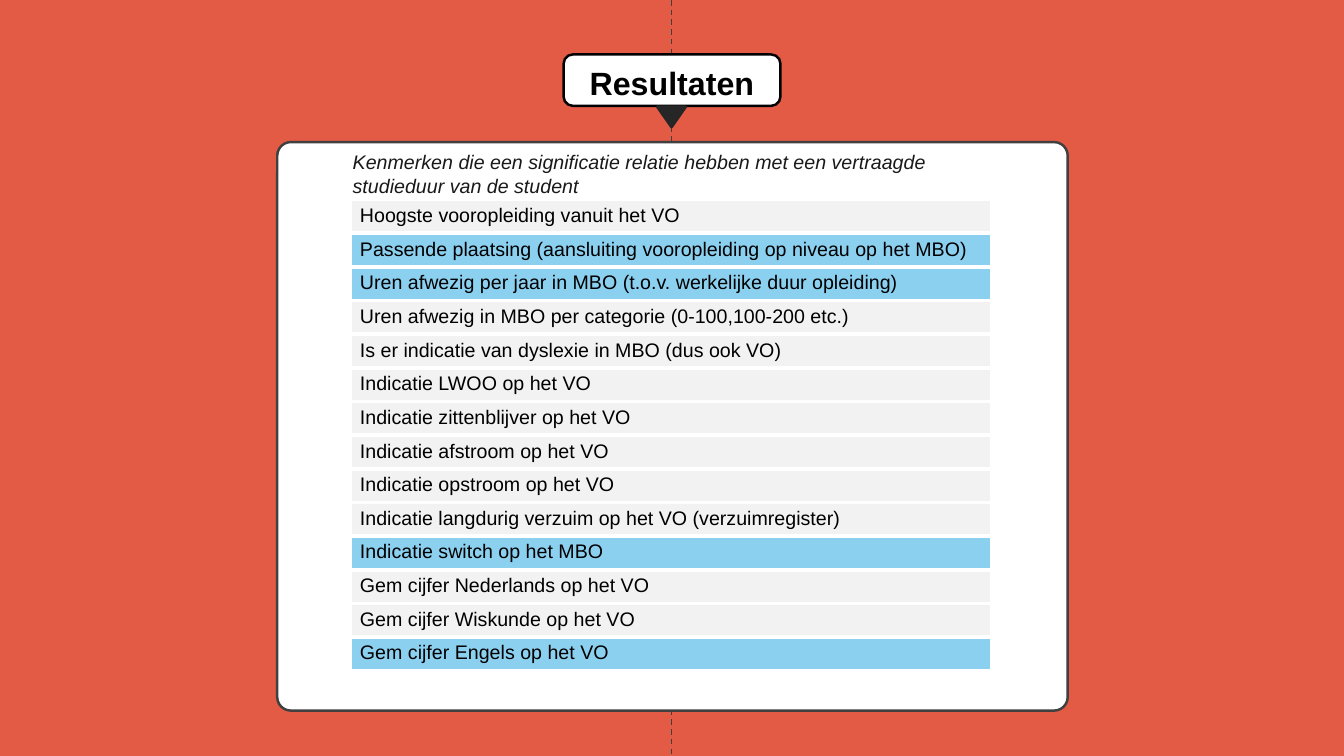
from dataclasses import dataclass

from lxml import etree
from pptx import Presentation
from pptx.dml.color import RGBColor
from pptx.enum import dml, shapes, text
from pptx.oxml import ns
from pptx.util import Inches, Pt

COLORS = {
    "background": "E35A45",
    "panel": "FFFFFF",
    "outline": "404040",
    "text": "000000",
    "caption": "191919",
    "pointer": "262626",
    "plain": "F2F2F2",
    "highlight": "8CD0F0",
}
FONT = "Arial"
SLIDE_WIDTH, SLIDE_HEIGHT = 13.33, 7.5
AXIS = 6.66


@dataclass(frozen=True)
class Block:
    kind: shapes.MSO_SHAPE
    left: float
    top: float
    width: float
    height: float
    fill: str
    line: str
    line_width: float
    corner: float | None = None
    rotation: float = 0


@dataclass(frozen=True)
class Feature:
    label: str
    highlighted: bool = False


ROUNDED = shapes.MSO_SHAPE.ROUNDED_RECTANGLE
PANEL = Block(ROUNDED, 2.75, 1.41, 7.84, 5.64, "panel", "outline", 1.75, 0.024)
TITLE = Block(ROUNDED, 5.59, 0.54, 2.15, 0.51, "panel", "text", 1.75, 0.178)
POINTER = Block(shapes.MSO_SHAPE.ISOSCELES_TRIANGLE, 6.52, 1.06, 0.28, 0.2,
                "pointer", "pointer", 2, rotation=180)

FEATURES = [
    Feature("Hoogste vooropleiding vanuit het VO"),
    Feature("Passende plaatsing (aansluiting vooropleiding op niveau op het MBO)", True),
    Feature("Uren afwezig per jaar in MBO (t.o.v. werkelijke duur opleiding)", True),
    Feature("Uren afwezig in MBO per categorie (0-100,100-200 etc.)"),
    Feature("Is er indicatie van dyslexie in MBO (dus ook VO)"),
    Feature("Indicatie LWOO op het VO"),
    Feature("Indicatie zittenblijver op het VO"),
    Feature("Indicatie afstroom op het VO"),
    Feature("Indicatie opstroom op het VO"),
    Feature("Indicatie langdurig verzuim op het VO (verzuimregister)"),
    Feature("Indicatie switch op het MBO", True),
    Feature("Gem cijfer Nederlands op het VO"),
    Feature("Gem cijfer Wiskunde op het VO"),
    Feature("Gem cijfer Engels op het VO", True),
]


def color(name: str) -> RGBColor:
    return RGBColor.from_string(COLORS[name])


def write(frame, content: str, *, size: float = 14, fill: str = "text",
          bold: bool = False, italic: bool = False,
          align=text.PP_ALIGN.LEFT, spacing: float = 1.0) -> None:
    frame.word_wrap = True
    para = frame.paragraphs[0]
    para.alignment = align
    para.line_spacing = spacing
    span = para.add_run()
    span.text = content
    span.font.name = FONT
    span.font.size = Pt(size)
    span.font.bold = bold
    span.font.italic = italic
    span.font.color.rgb = color(fill)


def draw_block(page, block: Block):
    shape = page.shapes.add_shape(
        block.kind, Inches(block.left), Inches(block.top),
        Inches(block.width), Inches(block.height))
    shape.shadow.inherit = False
    shape.rotation = block.rotation
    if block.corner is not None:
        shape.adjustments[0] = block.corner
    shape.fill.solid()
    shape.fill.fore_color.rgb = color(block.fill)
    shape.line.color.rgb = color(block.line)
    shape.line.width = Pt(block.line_width)
    return shape


def draw_axis(page) -> None:
    axis = page.shapes.add_connector(
        shapes.MSO_CONNECTOR.STRAIGHT,
        Inches(AXIS), Inches(0), Inches(AXIS), Inches(SLIDE_HEIGHT))
    axis.line.color.rgb = color("outline")
    axis.line.width = Pt(1)
    axis.line.dash_style = dml.MSO_LINE.DASH
    etree.SubElement(axis._element.spPr, ns.qn("a:effectLst"))


def draw_title(page) -> None:
    frame = draw_block(page, TITLE).text_frame
    frame.vertical_anchor = text.MSO_ANCHOR.MIDDLE
    frame.margin_left = frame.margin_right = Inches(0.12)
    write(frame, "Resultaten", size=23, bold=True,
          align=text.PP_ALIGN.CENTER, spacing=1.15)


def draw_caption(page) -> None:
    box = page.shapes.add_textbox(
        Inches(3.4), Inches(1.44), Inches(6.53), Inches(0.54))
    write(box.text_frame, "Kenmerken die een significatie relatie hebben met "
          "een vertraagde studieduur van de student",
          fill="caption", italic=True)


def add_borders(cell, fill: str, width: float) -> None:
    """Outline all four sides of a cell; borders must precede its fill."""
    properties = cell._tc.get_or_add_tcPr()
    for index, side in enumerate(("lnL", "lnR", "lnT", "lnB")):
        border = etree.Element(ns.qn(f"a:{side}"), w=str(Pt(width)))
        solid = etree.SubElement(border, ns.qn("a:solidFill"))
        etree.SubElement(solid, ns.qn("a:srgbClr"), val=COLORS[fill])
        properties.insert(index, border)


def draw_features(page, features: list[Feature]) -> None:
    height = Inches(4.67)
    table = page.shapes.add_table(
        len(features), 1, Inches(3.47), Inches(1.98), Inches(6.37), height).table
    table.first_row = False
    table.horz_banding = False
    for row, feature in zip(table.rows, features):
        row.height = height // len(features)
        cell = row.cells[0]
        cell.fill.solid()
        cell.fill.fore_color.rgb = color("highlight" if feature.highlighted else "plain")
        add_borders(cell, "panel", 3)
        write(cell.text_frame, feature.label)


def main() -> None:
    deck = Presentation()
    deck.slide_width = Inches(SLIDE_WIDTH)
    deck.slide_height = Inches(SLIDE_HEIGHT)
    page = deck.slides.add_slide(deck.slide_layouts[6])
    page.background.fill.solid()
    page.background.fill.fore_color.rgb = color("background")

    draw_axis(page)
    draw_block(page, PANEL)
    draw_caption(page)
    draw_title(page)
    draw_block(page, POINTER)
    draw_features(page, FEATURES)
    deck.save("out.pptx")


if __name__ == "__main__":
    main()
